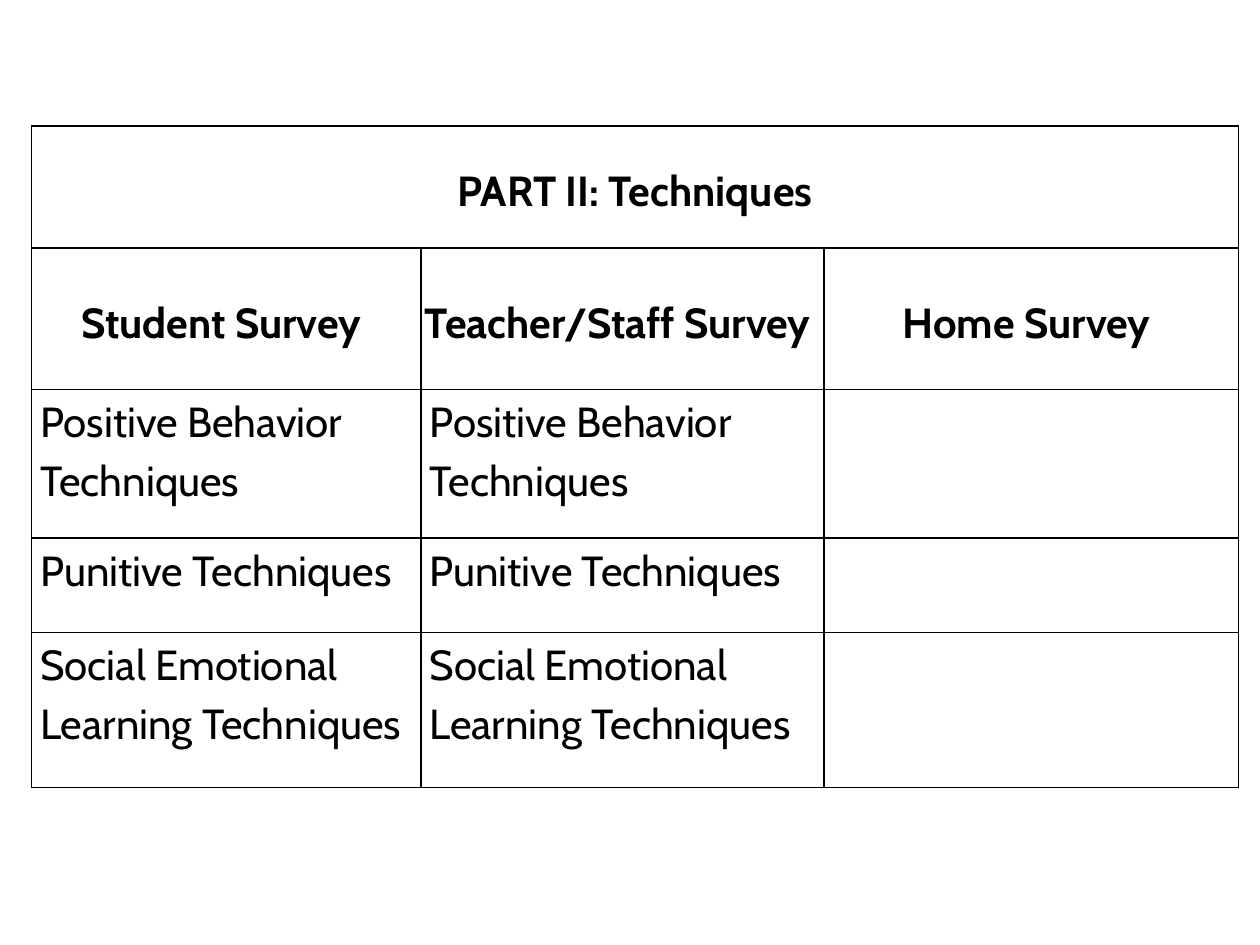
from lxml import etree
from pptx import Presentation
from pptx.dml.color import RGBColor
from pptx.enum.text import MSO_ANCHOR, PP_ALIGN
from pptx.oxml.ns import qn
from pptx.util import Inches, Pt

MIDDLE, TOP = MSO_ANCHOR.MIDDLE, MSO_ANCHOR.TOP
CENTER, LEFT = PP_ALIGN.CENTER, PP_ALIGN.LEFT

BLACK = RGBColor(0x00, 0x00, 0x00)
WHITE = RGBColor(0xFF, 0xFF, 0xFF)
FONT = "Cabin"
BLANK_LAYOUT = 6

TABLE_LEFT, TABLE_TOP = 0.25, 1
COLUMN_WIDTHS = [3.09, 3.2, 3.29]
ROW_HEIGHTS = [0.97, 1.12, 1.18, 0.75, 1.23]

HEADING = "PART II: Techniques"
SURVEYS = ["Student Survey ", "Teacher/Staff Survey ", "Home Survey "]
TECHNIQUES = [
    "Positive Behavior Techniques",
    "Punitive Techniques",
    "Social Emotional Learning Techniques",
]


def add_borders(cell):
    """Draw a thin black line on all four sides of a cell."""
    properties = cell._tc.get_or_add_tcPr()
    for side in ("lnL", "lnR", "lnT", "lnB"):
        line = etree.SubElement(properties, qn(f"a:{side}"), w=str(Pt(1)))
        fill = etree.SubElement(line, qn("a:solidFill"))
        etree.SubElement(fill, qn("a:srgbClr"), val=str(BLACK))


def set_margins(cell, side, top):
    cell.margin_left = cell.margin_right = Inches(side)
    cell.margin_top, cell.margin_bottom = Inches(top), 0


def write_cell(cell, text, is_header):
    cell.text_frame.text = text
    cell.vertical_anchor = MIDDLE if is_header else TOP
    set_margins(cell, *((0.03, 0.01) if is_header else (0.07, 0)))

    paragraph = cell.text_frame.paragraphs[0]
    paragraph.alignment = CENTER if is_header else LEFT
    paragraph.line_spacing = 1.15
    paragraph.space_after = Pt(10 if is_header else 0)
    for run in paragraph.runs:
        run.font.name = FONT
        run.font.size = Pt(24)
        run.font.bold = is_header
        run.font.color.rgb = BLACK


def add_survey_table(slide, rows, header_count):
    table = slide.shapes.add_table(
        len(ROW_HEIGHTS), len(COLUMN_WIDTHS),
        Inches(TABLE_LEFT), Inches(TABLE_TOP),
        Inches(sum(COLUMN_WIDTHS)), Inches(sum(ROW_HEIGHTS)),
    ).table
    table.first_row = table.horz_banding = False
    for column, width in zip(table.columns, COLUMN_WIDTHS):
        column.width = Inches(width)
    for row, height in zip(table.rows, ROW_HEIGHTS):
        row.height = Inches(height)

    # Borders come before the fill in a cell's properties
    for cell in table.iter_cells():
        add_borders(cell)
        cell.fill.solid()
        cell.fill.fore_color.rgb = WHITE

    # The heading spans every survey column
    table.cell(0, 0).merge(table.cell(0, len(COLUMN_WIDTHS) - 1))
    for row_index, texts in enumerate(rows):
        for column_index, text in enumerate(texts):
            write_cell(table.cell(row_index, column_index), text,
                       row_index < header_count)


def main():
    presentation = Presentation()
    presentation.slide_width = Inches(10)
    presentation.slide_height = Inches(7.5)
    slide = presentation.slides.add_slide(
        presentation.slide_layouts[BLANK_LAYOUT])

    # Student and teacher surveys share techniques; the home survey has none
    technique_rows = [[technique] * 2 for technique in TECHNIQUES]
    add_survey_table(slide, [[HEADING], SURVEYS, *technique_rows],
                     header_count=2)

    presentation.save("out.pptx")


if __name__ == "__main__":
    main()
